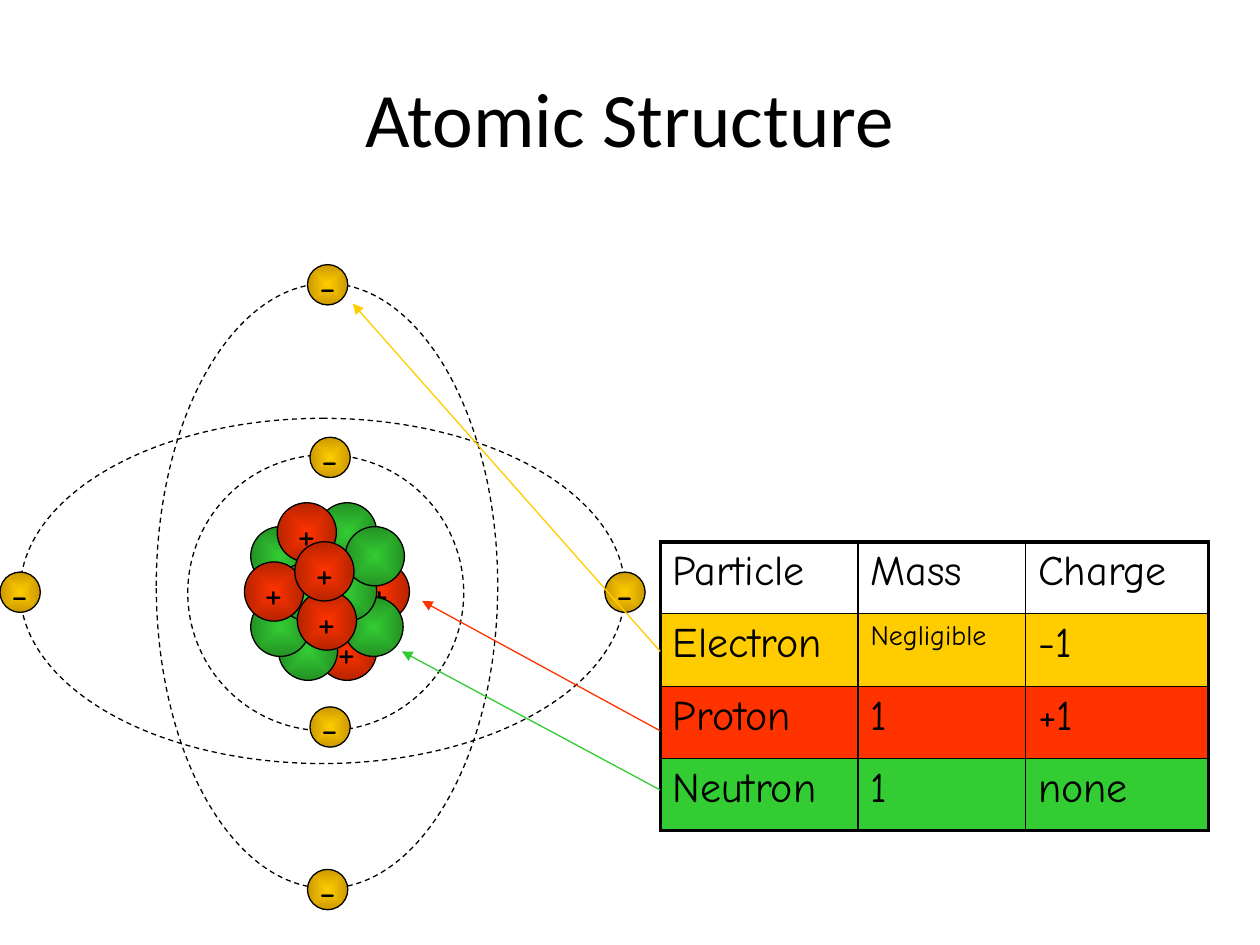
import dataclasses

import lxml.etree
import pptx
import pptx.dml.color
import pptx.enum.dml
import pptx.enum.shapes
import pptx.enum.text
import pptx.oxml.ns
import pptx.util

Inches = pptx.util.Inches
Pt = pptx.util.Pt
qn = pptx.oxml.ns.qn


@dataclasses.dataclass(frozen=True)
class Theme:
    title_font: str = "Calibri"
    body_font: str = "Comic Neue"
    title_size: float = 44
    body_size: float = 24
    small_size: float = 16
    thin: float = 0.75
    inner: float = 1
    outer: float = 2.25
    ink: str = "000000"
    paper: str = "FFFFFF"
    electron: str = "FFCC00"
    electron_edge: str = "CC9900"
    proton: str = "FF3300"
    proton_edge: str = "B62400"
    neutron: str = "33CC33"
    neutron_edge: str = "249224"


def rgb(color):
    return pptx.dml.color.RGBColor.from_string(color)


def add_xml(parent, tag, **attrs):
    return lxml.etree.SubElement(parent, qn(tag), attrs)


class SlideBuilder:
    def __init__(self, slide, theme):
        self.slide = slide
        self.theme = theme

    def run(self, p, text, size, font):
        r = p.add_run()
        r.text = text
        r.font.size = Pt(size)
        r.font.name = font
        r.font.color.rgb = rgb(self.theme.ink)

    def centred(self, tf, text, size, font, wrap):
        tf.word_wrap = wrap
        tf.vertical_anchor = pptx.enum.text.MSO_ANCHOR.MIDDLE
        p = tf.paragraphs[0]
        p.alignment = pptx.enum.text.PP_ALIGN.CENTER
        self.run(p, text, size, font)

    def title(self, text, left, top, width, height):
        sp = self.slide.shapes.add_textbox(
            Inches(left), Inches(top), Inches(width), Inches(height))
        self.centred(sp.text_frame, text, self.theme.title_size,
                     self.theme.title_font, True)

    def ellipse(self, left, top, width, height):
        sp = self.slide.shapes.add_shape(
            pptx.enum.shapes.MSO_SHAPE.OVAL,
            Inches(left), Inches(top), Inches(width), Inches(height))
        sp.shadow.inherit = False
        sp.line.color.rgb = rgb(self.theme.ink)
        sp.line.width = Pt(self.theme.thin)
        return sp

    def orbit(self, left, top, width, height, rotation=0):
        sp = self.ellipse(left, top, width, height)
        sp.fill.background()
        sp.line.dash_style = pptx.enum.dml.MSO_LINE.DASH
        sp.rotation = rotation

    def particle(self, left, top, size, colors, sign=""):
        sp = self.ellipse(left, top, size, size)
        sp.fill.gradient()
        for stop, color in zip(sp.fill.gradient_stops, colors):
            stop.color.rgb = rgb(color)
        grad = sp._element.spPr.find(qn("a:gradFill"))
        grad.remove(grad.find(qn("a:lin")))
        path = add_xml(grad, "a:path", path="shape")
        add_xml(path, "a:fillToRect", l="50000", t="50000", r="50000", b="50000")
        if sign:
            self.centred(sp.text_frame, sign, self.theme.body_size,
                         self.theme.body_font, False)

    def arrow(self, start, end, color):
        line = self.slide.shapes.add_connector(
            pptx.enum.shapes.MSO_CONNECTOR.STRAIGHT,
            *[Inches(v) for v in start + end])
        line.line.color.rgb = rgb(color)
        line.line.width = Pt(self.theme.thin)
        add_xml(line.line._get_or_add_ln(), "a:tailEnd", type="triangle")
        add_xml(line._element.spPr, "a:effectLst")

    def border(self, cell, side, width):
        ln = add_xml(cell._tc.get_or_add_tcPr(), "a:ln" + side, w=str(Pt(width)))
        fill = add_xml(ln, "a:solidFill")
        add_xml(fill, "a:srgbClr", val=self.theme.ink)

    def table(self, left, top, widths, heights, rows, fills):
        table = self.slide.shapes.add_table(
            len(rows), len(widths), Inches(left), Inches(top),
            Inches(sum(widths)), Inches(sum(heights))).table
        table.first_row = table.horz_banding = False
        for column, width in zip(table.columns, widths):
            column.width = Inches(width)
        for i, (texts, fill) in enumerate(zip(rows, fills)):
            table.rows[i].height = Inches(heights[i])
            for j, text in enumerate(texts):
                cell = table.cell(i, j)
                edges = {"L": j == 0, "R": j == len(widths) - 1,
                         "T": i == 0, "B": i == len(rows) - 1}
                for side, outside in edges.items():
                    self.border(cell, side,
                                self.theme.outer if outside else self.theme.inner)
                cell.fill.solid()
                cell.fill.fore_color.rgb = rgb(fill)
                p = cell.text_frame.paragraphs[0]
                before = add_xml(p._p.get_or_add_pPr(), "a:spcBef")
                add_xml(before, "a:spcPct", val="20000")
                size = (self.theme.small_size if text == "Negligible"
                        else self.theme.body_size)
                self.run(p, text, size, self.theme.body_font)


def main():
    prs = pptx.Presentation()
    prs.slide_width = Inches(10)
    prs.slide_height = Inches(7.5)
    theme = Theme()
    s = SlideBuilder(prs.slides.add_slide(prs.slide_layouts[6]), theme)

    s.title("Atomic Structure", 0.5, 0.3, 9, 1.25)

    proton = (theme.proton, theme.proton_edge), "+"
    neutron = (theme.neutron, theme.neutron_edge), ""
    electron = (theme.electron, theme.electron_edge), "-"
    back_protons = [(2.78, 4.46), (2.52, 4.93)]
    neutrons = [(2.52, 3.99), (2.21, 4.93), (2.73, 4.74), (1.99, 4.74),
                (1.99, 4.18), (2.52, 4.46), (2.21, 4.46), (2.74, 4.18)]
    front_protons = [(2.2, 3.99), (1.94, 4.46), (2.36, 4.69), (2.34, 4.3)]
    electrons = [(2.44, 6.9), (4.8, 4.54), (0, 4.54),
                 (2.46, 5.61), (2.46, 3.47), (2.44, 2.1)]

    for places, kind in ((back_protons, proton), (neutrons, neutron),
                         (front_protons, proton)):
        for left, top in places:
            s.particle(left, top, 0.47, *kind)

    s.orbit(1.24, 2.25, 2.71, 4.8)
    s.orbit(1.19, 2.29, 2.74, 4.8, rotation=90)
    s.orbit(1.49, 3.61, 2.19, 2.19)
    for left, top in electrons:
        s.particle(left, top, 0.32, *electron)

    table_left = 5.24
    s.table(table_left, 4.3, (1.57, 1.33, 1.45), (0.57, 0.58, 0.57, 0.57),
            [("Particle", "Mass", "Charge"),
             ("Electron", "Negligible", "-1"),
             ("Proton", "1", "+1"),
             ("Neutron", "1", "none")],
            (theme.paper, theme.electron, theme.proton, theme.neutron))

    for start_y, end, color in ((5.17, (2.8, 2.41), theme.electron),
                                (5.8, (3.35, 4.77), theme.proton),
                                (6.27, (3.19, 5.17), theme.neutron)):
        s.arrow((table_left, start_y), end, color)

    prs.save("out.pptx")


if __name__ == "__main__":
    main()
